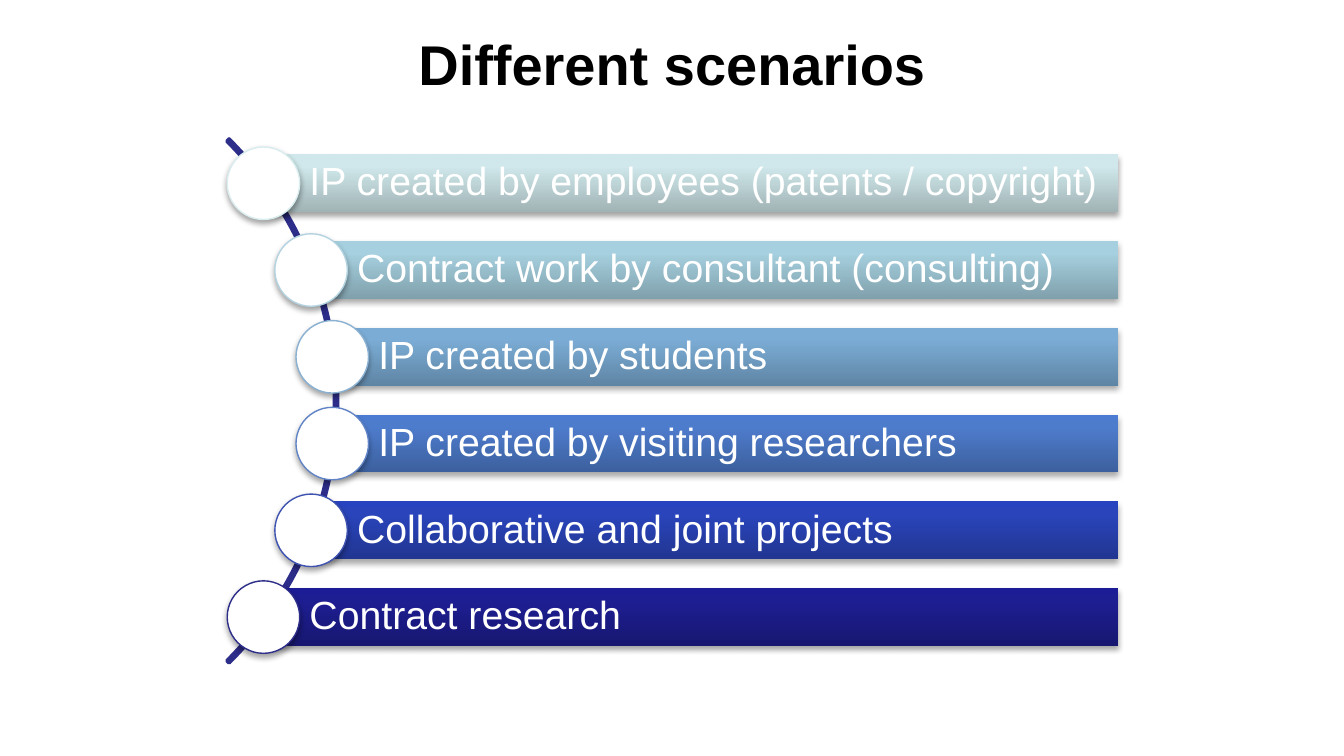
from copy import deepcopy

from pptx import Presentation
from pptx.dml.color import RGBColor
from pptx.enum.shapes import MSO_SHAPE
from pptx.enum.text import MSO_ANCHOR, PP_ALIGN
from pptx.oxml import parse_xml
from pptx.oxml.ns import nsdecls, qn
from pptx.util import Cm, Pt

RECT = MSO_SHAPE.RECTANGLE
OVAL = MSO_SHAPE.OVAL
BLOCK_ARC = MSO_SHAPE.BLOCK_ARC
MIDDLE = MSO_ANCHOR.MIDDLE
CENTER = PP_ALIGN.CENTER

WHITE = RGBColor(0xFF, 0xFF, 0xFF)
BLACK = RGBColor(0x00, 0x00, 0x00)
NAVY = RGBColor(0x2D, 0x2D, 0x8A)

SCENARIOS = [
    ("IP created by employees (patents / copyright)", 4.98, RGBColor(0xDA, 0xED, 0xEF),
     [RGBColor(0xA0, 0xB3, 0xB5), RGBColor(0xD0, 0xE8, 0xEB), RGBColor(0xD1, 0xEA, 0xEC)]),
    ("Contract work by consultant (consulting)", 5.88, RGBColor(0xB3, 0xD3, 0xE0),
     [RGBColor(0x80, 0xA0, 0xAC), RGBColor(0xA6, 0xD0, 0xDF), RGBColor(0xA6, 0xD1, 0xE1)]),
    ("IP created by students", 6.28, RGBColor(0x8A, 0xB1, 0xD2),
     [RGBColor(0x5F, 0x85, 0xA4), RGBColor(0x7B, 0xAC, 0xD5), RGBColor(0x7A, 0xAD, 0xD8)]),
    ("IP created by visiting researchers", 6.28, RGBColor(0x60, 0x84, 0xC5),
     [RGBColor(0x3C, 0x60, 0x9E), RGBColor(0x4E, 0x7C, 0xCD), RGBColor(0x4C, 0x7C, 0xD1)]),
    ("Collaborative and joint projects", 5.88, RGBColor(0x3D, 0x52, 0xB1),
     [RGBColor(0x21, 0x35, 0x91), RGBColor(0x2A, 0x45, 0xBC), RGBColor(0x28, 0x43, 0xC0)]),
    ("Contract research", 4.98, NAVY,
     [RGBColor(0x17, 0x17, 0x71), RGBColor(0x1E, 0x1E, 0x93), RGBColor(0x1C, 0x1C, 0x96)]),
]
STOPS = [0, 0.8, 1]
BAR_TOP, BAR_HEIGHT, BAR_RIGHT, PITCH = 2.92, 1.09, 21.13, 1.64
DOT = 1.37


def add_shadow(sp):
    sp.shadow.inherit = False
    effects = sp._element.spPr.find(qn("a:effectLst"))
    effects.append(parse_xml(
        f'<a:outerShdw {nsdecls("a")} blurRad="{Pt(3.1)}" dist="{Pt(1.8)}" '
        'dir="5400000" rotWithShape="0"><a:srgbClr val="000000">'
        '<a:alpha val="35000"/></a:srgbClr></a:outerShdw>'))


def fill_gradient(sp, colors):
    sp.fill.gradient()
    sp.fill.gradient_angle = 90
    gs_list = sp._element.spPr.find(".//" + qn("a:gsLst"))
    gs_list.append(deepcopy(gs_list[-1]))
    for stop, position, color in zip(sp.fill.gradient_stops, STOPS, colors):
        stop.position = position
        stop.color.rgb = color


prs = Presentation()
prs.slide_width, prs.slide_height = Cm(25.4), Cm(14.29)
s = prs.slides.add_slide(prs.slide_layouts[6])

arc = s.shapes.add_shape(BLOCK_ARC, Cm(-7.62), Cm(0.58), Cm(14), Cm(14))
for i, value in enumerate([189, 27, 0.004]):
    arc.adjustments[i] = value
arc.shadow.inherit = False
arc.fill.background()
arc.line.color.rgb = NAVY
arc.line.width = Pt(2)

for i, (text, left, outline, colors) in enumerate(SCENARIOS):
    top = BAR_TOP + i * PITCH
    bar = s.shapes.add_shape(RECT, Cm(left), Cm(top), Cm(BAR_RIGHT - left), Cm(BAR_HEIGHT))
    fill_gradient(bar, colors)
    bar.line.fill.background()
    add_shadow(bar)
    tf = bar.text_frame
    tf.word_wrap = True
    tf.vertical_anchor = MIDDLE
    tf.margin_left = Cm(0.87)
    tf.margin_top = tf.margin_right = tf.margin_bottom = Cm(0.15)
    p = tf.paragraphs[0]
    p.text = text
    p.alignment = PP_ALIGN.LEFT
    p.line_spacing = 0.9
    p.font.name = "Arial"
    p.font.size = Pt(21)
    p.font.color.rgb = WHITE

    dot = s.shapes.add_shape(OVAL, Cm(left - DOT / 2), Cm(top + (BAR_HEIGHT - DOT) / 2),
                             Cm(DOT), Cm(DOT))
    dot.fill.solid()
    dot.fill.fore_color.rgb = WHITE
    dot.line.color.rgb = outline
    dot.line.width = Pt(0.75)
    add_shadow(dot)

title = s.shapes.add_textbox(0, 0, prs.slide_width, Cm(2.39))
tf = title.text_frame
tf.word_wrap = True
tf.vertical_anchor = MIDDLE
p = tf.paragraphs[0]
p.text = "Different scenarios"
p.alignment = CENTER
p.font.name = "Arial"
p.font.size = Pt(30)
p.font.bold = True
p.font.color.rgb = BLACK

prs.save("out.pptx")
